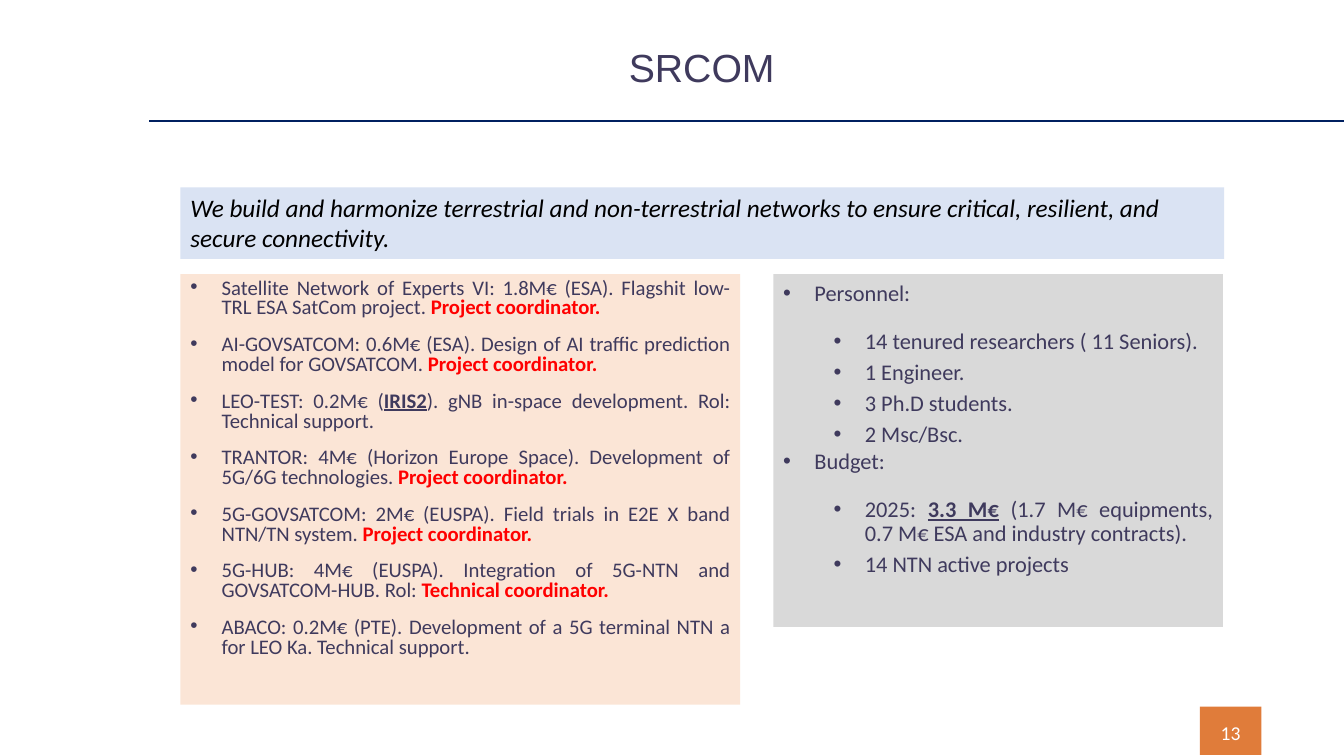
import lxml.etree
import pptx
import pptx.dml.color
import pptx.enum.shapes
import pptx.enum.text
import pptx.oxml.ns
import pptx.util

Inches = pptx.util.Inches
Pt = pptx.util.Pt
ALIGN = pptx.enum.text.PP_ALIGN
ANCHOR = pptx.enum.text.MSO_ANCHOR

COLORS = {
    "ink": "3F3A5D", "black": "000000", "white": "FFFFFF", "red": "FF0000",
    "rule": "002060", "orange": "E07C3A", "peach": "FBE5D6",
    "blue": "DAE3F3", "gray": "D9D9D9",
}

STYLES = {
    "plain": {},
    "role": {"color": "red", "bold": True},
    "key": {"bold": True, "underline": True},
}

COORDINATOR = ("Project coordinator.", "role")

PROJECTS = [
    [("Satellite Network of Experts VI: 1.8M€ (ESA). Flagshit low-TRL ESA SatCom project. ", "plain"),
     COORDINATOR],
    [("AI-GOVSATCOM: 0.6M€ (ESA). Design of AI traffic prediction model for GOVSATCOM. ", "plain"),
     COORDINATOR],
    [("LEO-TEST: 0.2M€ (", "plain"), ("IRIS2", "key"),
     ("). gNB in-space development. Rol: Technical support.", "plain")],
    [("TRANTOR: 4M€ (Horizon Europe Space). Development of 5G/6G technologies. ", "plain"),
     COORDINATOR],
    [("5G-GOVSATCOM: 2M€ (EUSPA). Field trials in E2E X band NTN/TN system. ", "plain"),
     COORDINATOR],
    [("5G-HUB: 4M€ (EUSPA). Integration of 5G-NTN and GOVSATCOM-HUB. Rol: ", "plain"),
     ("Technical coordinator.", "role")],
    [("ABACO: 0.2M€ (PTE). Development of a 5G terminal NTN a for LEO Ka. Technical support.", "plain")],
]

RESOURCES = [
    ("Personnel:", [
        [("14 tenured researchers ( 11 Seniors).", "plain")],
        [("1 Engineer.", "plain")],
        [("3 Ph.D students.", "plain")],
        [("2 Msc/Bsc.", "plain")],
    ]),
    ("Budget:", [
        [("2025: ", "plain"), ("3.3 M€", "key"),
         (" (1.7 M€ equipments, 0.7 M€ ESA and industry contracts).", "plain")],
        [("14 NTN active projects", "plain")],
    ]),
]


def rgb(name):
    """Return the named colour."""
    return pptx.dml.color.RGBColor.from_string(COLORS[name])


def add_span(para, text, size, color="ink", font="Calibri", bold=False, italic=False, underline=False):
    """Append one formatted run to a paragraph."""
    span = para.add_run()
    span.text = text
    span.font.name = font
    span.font.size = Pt(size)
    span.font.color.rgb = rgb(color)
    span.font.bold = bold
    span.font.italic = italic
    span.font.underline = underline


def add_panel(page, box, fill):
    """Add a borderless filled rectangle with wrapped, top-anchored text."""
    panel = page.shapes.add_shape(pptx.enum.shapes.MSO_SHAPE.RECTANGLE, *map(Inches, box))
    panel.shadow.inherit = False
    panel.fill.solid()
    panel.fill.fore_color.rgb = rgb(fill)
    panel.line.fill.background()
    panel.text_frame.word_wrap = True
    panel.text_frame.vertical_anchor = ANCHOR.TOP
    panel.text_frame.paragraphs[0].alignment = ALIGN.LEFT
    return panel


def add_bullet(frame, index, spans, size, level=0, line=1.0, before=0, after=0):
    """Write one justified bullet paragraph."""
    para = frame.paragraphs[0] if index == 0 else frame.add_paragraph()
    properties = para._p.get_or_add_pPr()
    properties.set("marL", str(Inches(0.31 + 0.5 * level)))
    properties.set("indent", str(Inches(-0.31)))
    for tag, name, value in (("a:buFont", "typeface", "Arial"), ("a:buChar", "char", "•")):
        mark = lxml.etree.SubElement(properties, pptx.oxml.ns.qn(tag))
        mark.set(name, value)
    para.level = level
    para.alignment = ALIGN.JUSTIFY
    para.line_spacing = line
    para.space_before = Pt(before)
    para.space_after = Pt(after)
    for text, style in spans:
        add_span(para, text, size, **STYLES[style])


def add_header(page, box):
    """Place the title and the rule below it."""
    left, top, width, height = box
    title = page.shapes.title
    title.left, title.top, title.width, title.height = map(Inches, box)
    frame = title.text_frame
    frame.word_wrap = True
    frame.vertical_anchor = ANCHOR.TOP
    para = frame.paragraphs[0]
    para.alignment = ALIGN.CENTER
    para.line_spacing = 0.9
    add_span(para, "SRCOM", 28, font="Arial")
    rule_y = Inches(top + height + 0.11)
    rule = page.shapes.add_connector(
        pptx.enum.shapes.MSO_CONNECTOR.STRAIGHT, Inches(left), rule_y, Inches(13.33), rule_y)
    rule.line.color.rgb = rgb("rule")
    rule.line.width = Pt(1)
    lxml.etree.SubElement(rule._element.spPr, pptx.oxml.ns.qn("a:effectLst"))


def add_mission(page, box):
    """Place the mission statement banner."""
    para = add_panel(page, box, "blue").text_frame.paragraphs[0]
    add_span(para, "We build and harmonize terrestrial and non-terrestrial networks to ensure "
             "critical, resilient, and secure connectivity.", 18, "black", italic=True)


def add_projects(page, box):
    """Place the list of projects."""
    frame = add_panel(page, box, "peach").text_frame
    for index, spans in enumerate(PROJECTS):
        add_bullet(frame, index, spans, 14.8, line=0.8, after=12)


def add_resources(page, box):
    """Place the personnel and budget list."""
    frame = add_panel(page, box, "gray").text_frame
    for index, (heading, details) in enumerate(RESOURCES):
        add_bullet(frame, index, [(heading, "plain")], 16, after=12)
        for spans in details:
            add_bullet(frame, 1, spans, 16, level=1, line=0.9, before=5)


def add_page_number(page, box):
    """Place the page number on its coloured tab."""
    left, top, width, height = box
    add_panel(page, box, "orange")
    label = page.shapes.add_textbox(
        Inches(left + 0.06), Inches(top + 0.09), Inches(0.49), Inches(0.35))
    frame = label.text_frame
    frame.word_wrap = False
    frame.vertical_anchor = ANCHOR.BOTTOM
    frame.margin_left = frame.margin_right = Inches(0.06)
    frame.margin_top = frame.margin_bottom = Inches(0.06)
    para = frame.paragraphs[0]
    para.alignment = ALIGN.CENTER
    add_span(para, "13", 14, "white")


def main():
    """Build the slide and save the deck."""
    deck = pptx.Presentation()
    deck.slide_width = Inches(13.33)
    deck.slide_height = Inches(7.5)
    page = deck.slides.add_slide(deck.slide_layouts.get_by_name("Title Only"))
    add_header(page, (1.48, 0.43, 10.96, 0.66))
    add_page_number(page, (11.9, 7.01, 0.61, 0.48))
    add_projects(page, (1.79, 2.72, 5.55, 4.27))
    add_mission(page, (1.79, 1.86, 10.35, 0.71))
    add_resources(page, (7.67, 2.72, 4.46, 3.5))
    deck.save("out.pptx")


if __name__ == "__main__":
    main()
